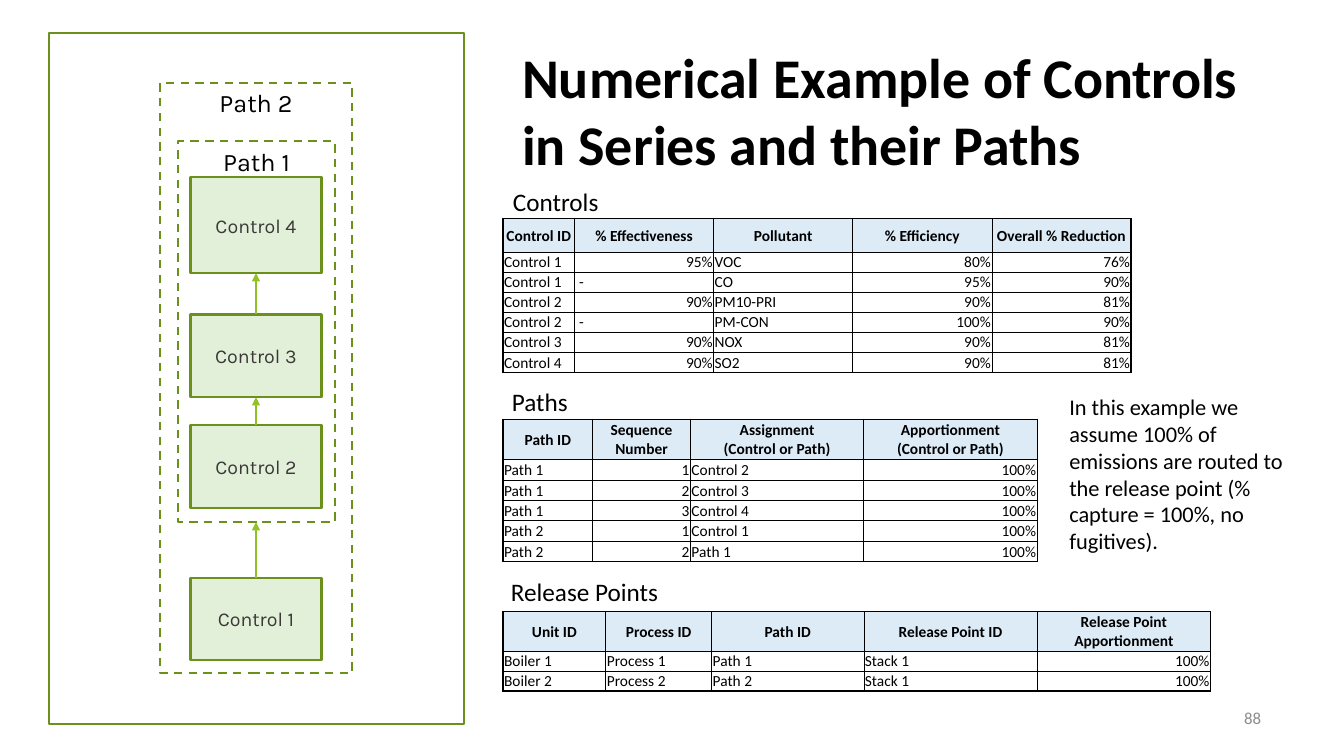
"""Builds the slide on controls in series, with a path diagram and three tables."""
from lxml import etree
from pptx import Presentation
from pptx.dml.color import RGBColor
from pptx.enum.dml import MSO_LINE
from pptx.enum.shapes import MSO_CONNECTOR, MSO_SHAPE
from pptx.enum.text import MSO_ANCHOR, PP_ALIGN
from pptx.oxml.ns import qn
from pptx.util import Inches, Pt

LEFT, CENTER, RIGHT = PP_ALIGN.LEFT, PP_ALIGN.CENTER, PP_ALIGN.RIGHT
TOP, MIDDLE, BOTTOM = MSO_ANCHOR.TOP, MSO_ANCHOR.MIDDLE, MSO_ANCHOR.BOTTOM
RECTANGLE, STRAIGHT, DASH = MSO_SHAPE.RECTANGLE, MSO_CONNECTOR.STRAIGHT, MSO_LINE.DASH
GRID = Inches(0.1)


class Theme:
    font, diagram_font = "Calibri", "Karla"
    title, heading, note, diagram, number, table = 40, 18, 16, 14, 12, 11
    black, dark, gray = "000000", "3B3838", "8C8C8C"
    outline, arrow = "6B901C", "90C226"
    control_fill, header_fill = "E2F0D9", "DDEBF7"
    outer_border, inner_border = 1, 0.5


def place(*lengths):
    return [round(length * GRID) for length in lengths]


def write(frame, text, size, font=Theme.font, color=Theme.black, bold=False,
          align=LEFT, anchor=TOP):
    frame.word_wrap = True
    frame.vertical_anchor = anchor
    frame.text = text
    for paragraph in frame.paragraphs:
        paragraph.alignment = align
        for run in paragraph.runs:
            run.font.name = font
            run.font.size = Pt(size)
            run.font.bold = bold
            run.font.color.rgb = RGBColor.from_string(color)


presentation = Presentation()
presentation.slide_width, presentation.slide_height = place(133.33, 75)
slide = presentation.slides.add_slide(presentation.slide_layouts[5])
shapes = slide.shapes

title = shapes.title
title.left, title.top, title.width, title.height = place(50.8, 3.7, 74.5, 14.5)
write(title.text_frame, "Numerical Example of Controls in Series and their Paths",
      Theme.title, bold=True)

boxes = [
    ("", 4.9, 3.3, 41.1, 68.5),
    ("Path 2", 15.9, 8.2, 19, 58.6),
    ("Path 1", 17.7, 14, 15.5, 37.8),
    ("Control 1", 18.9, 57.3, 13, 8.2),
    ("Control 2", 18.9, 42.2, 13, 8.2),
    ("Control 3", 18.9, 31.2, 13, 8.2),
    ("Control 4", 18.9, 17.6, 13, 9.5),
]
for label, *bounds in boxes:
    shape = shapes.add_shape(RECTANGLE, *place(*bounds))
    shape.shadow.inherit = False
    shape.line.color.rgb = RGBColor.from_string(Theme.outline)
    shape.line.width = Pt(1.5)
    shape.fill.background()
    if label.startswith("Control"):
        shape.fill.solid()
        shape.fill.fore_color.rgb = RGBColor.from_string(Theme.control_fill)
        write(shape.text_frame, label, Theme.diagram, Theme.diagram_font, Theme.dark,
              align=CENTER, anchor=MIDDLE)
    elif label:
        shape.line.dash_style = DASH
        write(shape.text_frame, label, Theme.heading, Theme.diagram_font, align=CENTER)

for start, end in [(57.3, 51.8), (42.2, 39.4), (31.2, 27.1)]:
    arrow = shapes.add_connector(STRAIGHT, *place(25.4, start, 25.4, end))
    arrow.line.color.rgb = RGBColor.from_string(Theme.arrow)
    arrow.line.width = Pt(1)
    etree.SubElement(arrow.line._get_or_add_ln(), qn("a:tailEnd"), type="triangle")
    etree.SubElement(arrow._element.spPr, qn("a:effectLst"))

tables = [
    (21.7, [7.1, 13.8, 13.8, 13.8, 13.8], 3.3, 1.92, [
        ["Control ID", "% Effectiveness", "Pollutant", "% Efficiency", "Overall % Reduction"],
        ["Control 1", "95%", "VOC", "80%", "76%"],
        ["Control 1", " -", "CO", "95%", "90%"],
        ["Control 2", "90%", "PM10-PRI", "90%", "81%"],
        ["Control 2", " -", "PM-CON", "100%", "90%"],
        ["Control 3", "90%", "NOX", "90%", "81%"],
        ["Control 4", "90%", "SO2", "90%", "81%"],
    ]),
    (41.6, [8.9, 9.7, 17.2, 17.2], 4, 2.02, [
        ["Path ID", "Sequence Number", "Assignment\n(Control or Path)",
         "Apportionment\n(Control or Path)"],
        ["Path 1", "1", "Control 2", "100%"],
        ["Path 1", "2", "Control 3", "100%"],
        ["Path 1", "3", "Control 4", "100%"],
        ["Path 2", "1", "Control 1", "100%"],
        ["Path 2", "2", "Path 1", "100%"],
    ]),
    (60.7, [10.2, 10.5, 15.1, 17.2, 17.2], 3.7, 1.92, [
        ["Unit ID", "Process ID", "Path ID", "Release Point ID", "Release Point Apportionment"],
        ["Boiler 1", "Process 1", "Path 1", "Stack 1", "100%"],
        ["Boiler 2", "Process 2", "Path 2", "Stack 1", "100%"],
    ]),
]
for top, widths, header_height, row_height, rows in tables:
    heights = [header_height] + [row_height] * (len(rows) - 1)
    bounds = place(49.9, top, sum(widths), sum(heights))
    table = shapes.add_table(len(rows), len(widths), *bounds).table
    table.first_row = table.horz_banding = False
    for column, width in zip(table.columns, place(*widths)):
        column.width = width
    for row, height in zip(table.rows, place(*heights)):
        row.height = height
    for row_index, values in enumerate(rows):
        for column_index, value in enumerate(values):
            cell = table.cell(row_index, column_index)
            cell.margin_left = cell.margin_right = cell.margin_top = Inches(0.01)
            cell.margin_bottom = 0
            header = row_index == 0
            numeric = value.endswith("%") or value.isdigit()
            write(cell.text_frame, value, Theme.table, bold=header,
                  align=CENTER if header else RIGHT if numeric else LEFT)
            cell.vertical_anchor = MIDDLE if header else BOTTOM
            properties = cell._tc.get_or_add_tcPr()
            outer_edges = {"L": column_index == 0, "R": column_index == len(widths) - 1,
                           "T": header, "B": row_index == len(rows) - 1}
            for side, outer in outer_edges.items():
                weight = Theme.outer_border if outer else Theme.inner_border
                border = etree.SubElement(properties, qn(f"a:ln{side}"), w=str(Pt(weight)))
                fill = etree.SubElement(border, qn("a:solidFill"))
                etree.SubElement(fill, qn("a:srgbClr"), val=Theme.black)
            if header:
                cell.fill.solid()
                cell.fill.fore_color.rgb = RGBColor.from_string(Theme.header_fill)
            else:
                cell.fill.background()

captions = [
    ("Controls", Theme.heading, 49.9, 18, 14.2, 4),
    ("Paths", Theme.heading, 49.8, 37.8, 14.2, 4),
    ("Release Points", Theme.heading, 49.7, 56.7, 17.9, 4),
    ("In this example we assume 100% of emissions are routed to the release point "
     "(% capture = 100%, no fugitives).", Theme.note, 105.1, 38.5, 23.3, 19.9),
]
for text, size, *bounds in captions:
    write(shapes.add_textbox(*place(*bounds)).text_frame, text, size)

page_number = shapes.add_textbox(*place(96.1, 69.2, 30, 4))
write(page_number.text_frame, "88", Theme.number, color=Theme.gray, align=RIGHT, anchor=MIDDLE)

presentation.save("out.pptx")
